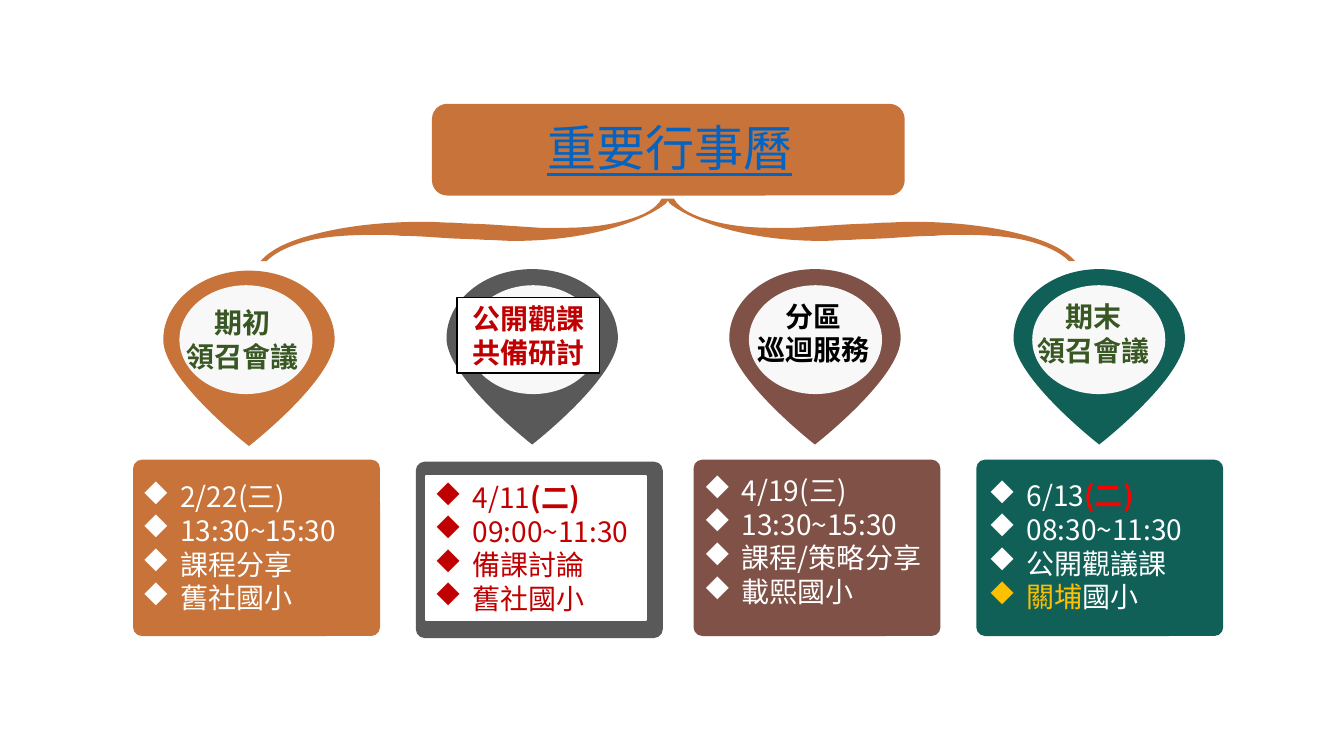
from lxml.etree import SubElement
from pptx import Presentation
from pptx.dml.color import RGBColor
from pptx.enum.shapes import MSO_SHAPE as Shape
from pptx.enum.text import PP_ALIGN as Align
from pptx.oxml.ns import qn
from pptx.util import Inches, Pt

# Grid: every cell is 0.1 inch, so the slide has 133.33 columns and 75 rows
CELL = Inches(0.1)
COLUMNS, ROWS = 133.33, 75
FONT = "Noto Sans CJK SC"
COLORS = {
    "orange": "C77339", "gray": "595959", "brown": "7F5147", "teal": "106057",
    "face": "F8F8F8", "white": "FFFFFF", "black": "000000", "link": "0563C1",
    "green": "385723", "crimson": "C00000", "red": "FF0000", "gold": "FFC000",
}

# Each curve is three control points; a lone point is a straight line
PIN_START = (0, 0.395)
PIN_CURVES = [
    [(0, 0.62), (0.5, 1), (0.5, 1)],
    [(0.5, 1), (1, 0.62), (1, 0.395)],
    [(1, 0.18), (0.78, 0), (0.5, 0)],
    [(0.22, 0), (0, 0.18), (0, 0.395)],
]
# Left half of the ribbon, in cells from its top left corner
RIBBON_START = (39.8, 0)
RIBBON_CURVES = [
    [(39.2, 1.1), (37.8, 1.7), (36.4, 2.1)],
    [(34.4, 2.7), (32.2, 2.9), (30.1, 2.9)],
    [(29.3, 2.9), (28.5, 2.9), (27.7, 2.9)],
    [(26.2, 2.8), (24.7, 2.7), (23.2, 2.6)],
    [(21.8, 2.5), (20.5, 2.5), (19.2, 2.4)],
    [(18.2, 2.4), (17.3, 2.3), (16.4, 2.3)],
    [(12.8, 2.3), (9, 2.6), (5.5, 3.5)],
    [(3.5, 4), (1.2, 4.8), (0, 6.2)],
    [(0.6, 6.2)],
    [(1.5, 5.3), (2.9, 4.7), (4.3, 4.3)],
    [(6.4, 3.7), (9.1, 3.6), (11.3, 3.6)],
    [(12.2, 3.6), (13.1, 3.6), (14, 3.7)],
    [(15.3, 3.7), (16.7, 3.8), (18.1, 3.9)],
    [(19.5, 4), (21, 4), (22.4, 4.1)],
    [(23.3, 4.1), (24.2, 4.2), (25.1, 4.2)],
    [(28.1, 4.2), (31, 3.9), (33.9, 3.2)],
    [(36.2, 2.6), (38.5, 1.8), (40.2, 0.5)],
    [(40.4, 0.2)],
]

# Boxes are left, top, width, height in cells
EVENTS = [
    dict(color="orange", pin=(16.2, 26.85), face=17.8, card=(13.2, 45.6),
         title=["期初", "領召會議"], title_box=(17.75, 29.9, 12.7, 7.5), title_color="green",
         list_box=(13.3, 47.2, 21.8, 14.3),
         items=["2/22(三)", "13:30~15:30", "課程分享", "舊社國小"]),
    dict(color="gray", pin=(44.3, 26.7), face=46.3, card=(41.25, 45.8),
         title=["公開觀課", "共備研討"], title_box=(45.35, 29.5, 14.1, 7.5), title_color="crimson",
         list_box=(42.3, 47.2, 21.8, 14.3), list_color="crimson", framed=True,
         items=[["4/11", ("(二)", "crimson", True)], "09:00~11:30", "備課討論", "舊社國小"]),
    dict(color="brown", pin=(72.35, 26.7), face=74.3, card=(68.8, 45.6),
         title=["分區", "巡迴服務"], title_box=(74.15, 29.3, 13.2, 7.7), title_color="black",
         title_font="Times New Roman", list_box=(69, 46.6, 24.7, 14.3),
         items=["4/19(三)", "13:30~15:30", "課程/策略分享", "載熙國小"]),
    dict(color="teal", pin=(100.55, 26.7), face=102.4, card=(96.85, 45.6),
         title=["期末", "領召會議"], title_box=(102.15, 29.3, 12.7, 7.5), title_color="green",
         list_box=(97.25, 47.1, 21.8, 14.3),
         items=[["6/13", ("(二)", "red", True)], "08:30~11:30", "公開觀議課",
                [("關埔", "gold", False), "國小"]]),
]


def cells(*lengths):
    return [round(length * CELL) for length in lengths]


def rgb(name):
    return RGBColor.from_string(COLORS[name])


def paint(shape, fill, line=None, width=1):
    shape.shadow.inherit = False
    shape.fill.solid()
    shape.fill.fore_color.rgb = rgb(fill)
    if line:
        shape.line.color.rgb = rgb(line)
        shape.line.width = Pt(width)
    else:
        shape.line.fill.background()
    return shape


def add_block(slide, kind, box, fill, **line):
    return paint(slide.shapes.add_shape(kind, *cells(*box)), fill, **line)


def mirror(start, curves, width):
    """Return the curves run backwards and flipped within the given width."""
    points = [start, *(curve[-1] for curve in curves)]
    flipped = []
    for origin, curve in zip(points[-2::-1], reversed(curves)):
        backwards = [*reversed(curve[:-1]), origin]
        flipped.append([(width - x, y) for x, y in backwards])
    return flipped


def add_outline(slide, start, curves, corner, fill, scale=(1, 1)):
    points = [start, *(point for curve in curves for point in curve)]
    spots = [cells(corner[0] + x * scale[0], corner[1] + y * scale[1]) for x, y in points]
    builder = slide.shapes.build_freeform(*spots[0], scale=1.0)
    builder.add_line_segments(spots[1:], close=True)
    shape = builder.convert_to_shape()
    # Join every three control points into one Bézier curve
    segments = iter(list(shape._element.iter(qn("a:lnTo"))))
    for curve in curves:
        first, *others = [next(segments) for _ in curve]
        if others:
            first.tag = qn("a:cubicBezTo")
            for segment in others:
                first.append(segment[0])
                segment.getparent().remove(segment)
    return paint(shape, fill)


def write(holder, paragraphs, *, color, size=20, bold=False, underline=None, font=FONT,
          align=Align.CENTER, wrap=False, bullet=None, inset=(0.7, 0.4)):
    frame = holder.text_frame
    frame.word_wrap = wrap
    frame.margin_left, frame.margin_top = cells(*inset)
    frame.margin_right, frame.margin_bottom = cells(*inset)
    for index, runs in enumerate(paragraphs):
        line = frame.paragraphs[0] if index == 0 else frame.add_paragraph()
        line.alignment = align
        if bullet:
            props = line._p.get_or_add_pPr()
            props.set("marL", str(Inches(0.38)))
            props.set("indent", str(-Inches(0.38)))
            SubElement(props, qn("a:buFont")).set("typeface", "Wingdings")
            SubElement(props, qn("a:buChar")).set("char", bullet)
        for part in [runs] if isinstance(runs, str) else runs:
            text, tint, strong = (part, color, bold) if isinstance(part, str) else part
            run = line.add_run()
            run.text = text
            run.font.size, run.font.bold, run.font.underline = Pt(size), strong, underline
            run.font.color.rgb = rgb(tint)
            run.font.name = font
            SubElement(run._r.get_or_add_rPr(), qn("a:ea")).set("typeface", FONT)


def add_heading(slide, box):
    left, top, width, height = box
    add_block(slide, Shape.ROUNDED_RECTANGLE, box, "orange")
    heading = slide.shapes.add_textbox(*cells(left + 10.45, top + 0.9, 26.6, 6.9))
    write(heading, ["重要行事曆"], color="link", size=35, underline=True,
          align=Align.LEFT, inset=(1, 0.5))
    # Ribbon below the banner, mirrored about its middle
    right_half = mirror(RIBBON_START, RIBBON_CURVES, 80.8)
    joint = [(80.8 - RIBBON_CURVES[-1][-1][0], RIBBON_CURVES[-1][-1][1])]
    add_outline(slide, RIBBON_START, [*RIBBON_CURVES, joint, *right_half],
                (left - 17, top + height + 0.3), "orange")


def add_event(slide, event):
    # Pin with its pale face
    add_outline(slide, PIN_START, PIN_CURVES, event["pin"], event["color"], (17, 17.4))
    add_block(slide, Shape.OVAL, (event["face"], 28.3, 13.2, 10.8), "face")
    # Card
    card = add_block(slide, Shape.ROUNDED_RECTANGLE, (*event["card"], 24.5, 17.5), event["color"])
    card.adjustments[0] = 0.05
    # Title and list, on white plates when framed
    if event.get("framed"):
        title = add_block(slide, Shape.RECTANGLE, event["title_box"], "white", line="black")
        details = add_block(slide, Shape.RECTANGLE, event["list_box"], "white",
                            line="white", width=1.5)
    else:
        title, details = (slide.shapes.add_textbox(*cells(*event[key]))
                          for key in ("title_box", "list_box"))
    write(title, event["title"], color=event["title_color"], bold=True,
          font=event.get("title_font", FONT))
    write(details, event["items"], color=event.get("list_color", "white"),
          align=Align.JUSTIFY, wrap=True, bullet="u", inset=(0.8, 0.4))


def main():
    deck = Presentation()
    deck.slide_width, deck.slide_height = cells(COLUMNS, ROWS)
    slide = deck.slides.add_slide(deck.slide_layouts[6])
    add_heading(slide, (42.85, 10.3, 46.9, 9.1))
    for event in EVENTS:
        add_event(slide, event)
    deck.save("out.pptx")


if __name__ == "__main__":
    main()
